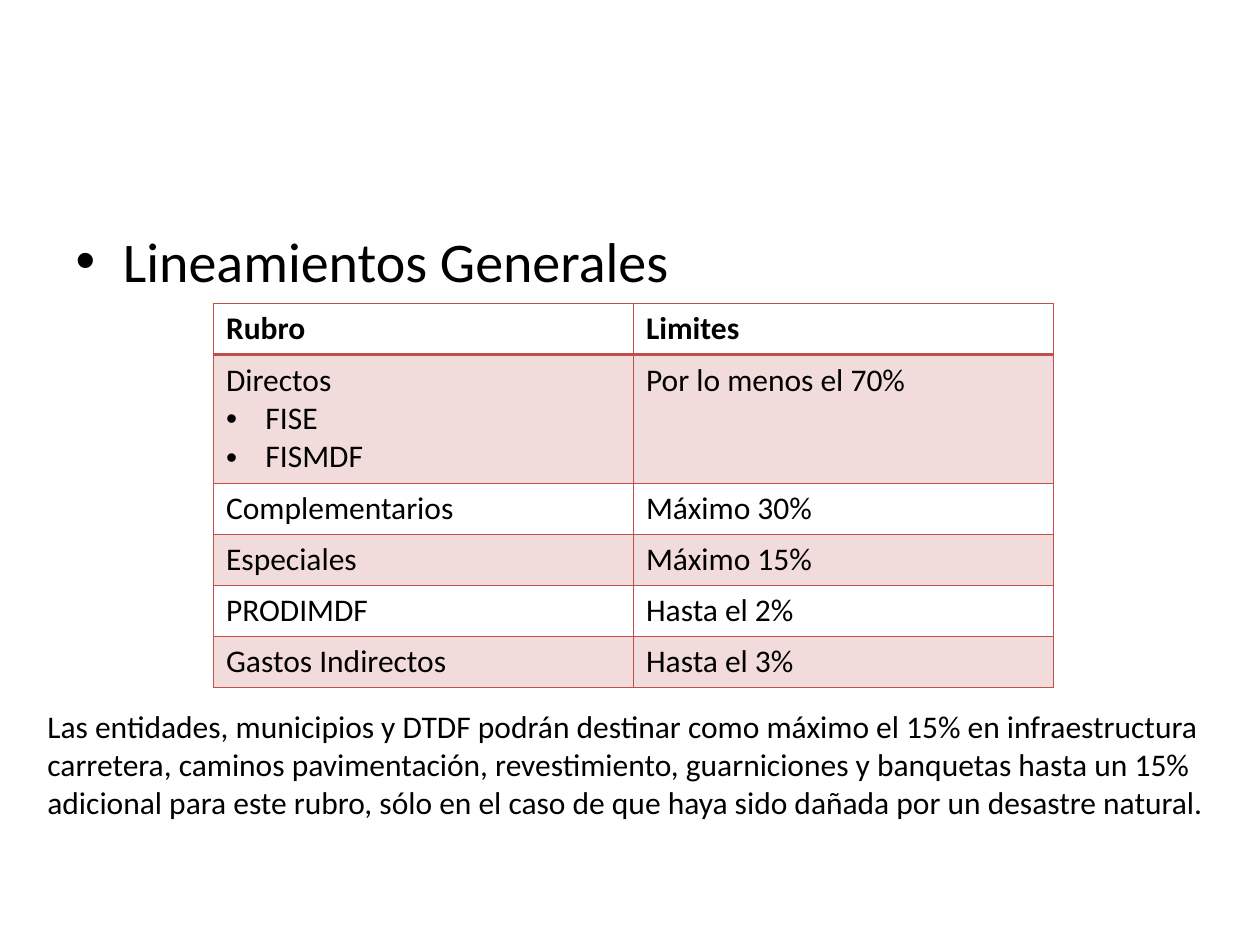
"""Build a slide listing the spending limits of the general guidelines."""
from dataclasses import dataclass

from lxml import etree
from pptx import Presentation
from pptx import util as u
from pptx.dml.color import RGBColor
from pptx.enum import text
from pptx.oxml.ns import qn

BLACK = RGBColor(0x00, 0x00, 0x00)
RED = RGBColor(0xC0, 0x50, 0x4D)
PALE_RED = RGBColor(0xF2, 0xDC, 0xDB)
ROW_HEIGHT = 29.2
TABLE_WIDTH = 480


@dataclass(frozen=True)
class Limit:
    item: str
    limit: str
    funds: tuple[str, ...] = ()
    height: float = ROW_HEIGHT


ROWS = (
    Limit("Rubro", "Limites"),
    Limit("Directos", "Por lo menos el 70%", ("FISE", "FISMDF"), 73.5),
    Limit("Complementarios", "Máximo 30%"),
    Limit("Especiales", "Máximo 15%"),
    Limit("PRODIMDF", "Hasta el 2%"),
    Limit("Gastos Indirectos", "Hasta el 3%"),
)
NOTE = (
    "Las entidades, municipios y DTDF podrán destinar como máximo el 15% en "
    "infraestructura carretera, caminos pavimentación, revestimiento, "
    "guarniciones y banquetas hasta un 15% adicional para este rubro, sólo en "
    "el caso de que haya sido dañada por un desastre natural."
)


def place(shape, left: float, top: float, width: float, height: float) -> None:
    box = {"left": left, "top": top, "width": width, "height": height}
    for name, value in box.items():
        setattr(shape, name, u.Pt(value))


def write(paragraph, words: str, size: float = 18, bold: bool = False,
          bullet_indent: float = 0) -> None:
    paragraph.text = words
    if bullet_indent:
        properties = paragraph._p.get_or_add_pPr()
        properties.set("marL", str(u.Pt(bullet_indent)))
        properties.set("indent", str(-u.Pt(bullet_indent)))
        etree.SubElement(properties, qn("a:buFont"), typeface="Arial")
        etree.SubElement(properties, qn("a:buChar"), char="•")
    paragraph.space_before = u.Pt(0)
    font = paragraph.runs[0].font
    formats = {"name": "Calibri", "size": u.Pt(size), "bold": bold}
    for name, value in formats.items():
        setattr(font, name, value)
    font.color.rgb = BLACK


def add_borders(cell, widths: dict[str, float]) -> None:
    properties = cell._tc.get_or_add_tcPr()
    for side, width in widths.items():
        line = etree.SubElement(properties, qn(f"a:ln{side}"), w=str(u.Pt(width)))
        fill = etree.SubElement(line, qn("a:solidFill"))
        etree.SubElement(fill, qn("a:srgbClr"), val=str(RED))


def add_limits_table(slide, rows: tuple[Limit, ...]) -> None:
    height = sum(row.height for row in rows)
    table = slide.shapes.add_table(
        len(rows), 2, u.Pt(122), u.Pt(173.5), u.Pt(TABLE_WIDTH), u.Pt(height)
    ).table
    for index, row in enumerate(rows):
        table.rows[index].height = u.Pt(row.height)
        header = index == 0
        for column, words in enumerate((row.item, row.limit)):
            cell = table.cell(index, column)
            add_borders(cell, {"L": 1, "R": 1, "T": 2 if index == 1 else 1,
                               "B": 2 if header else 1})
            if index % 2:
                cell.fill.solid()
                cell.fill.fore_color.rgb = PALE_RED
            else:
                cell.fill.background()
            write(cell.text_frame.paragraphs[0], words, bold=header)
        for fund in row.funds:
            paragraph = table.cell(index, 0).text_frame.add_paragraph()
            write(paragraph, fund, bullet_indent=22.5)


def main() -> None:
    presentation = Presentation()
    presentation.slide_width, presentation.slide_height = u.Pt(720), u.Pt(540)
    slide = presentation.slides.add_slide(presentation.slide_layouts[1])
    title, body = slide.placeholders
    title._element.getparent().remove(title._element)

    place(body, 36, 126, 648, 356.4)
    write(body.text_frame.paragraphs[0], "Lineamientos Generales",
          size=32, bullet_indent=27)

    add_limits_table(slide, ROWS)

    note = slide.shapes.add_textbox(0, 0, 0, 0)
    formats = {"word_wrap": True, "auto_size": text.MSO_AUTO_SIZE.SHAPE_TO_FIT_TEXT}
    for name, value in formats.items():
        setattr(note.text_frame, name, value)
    place(note, 20, 400.5, 700, 72.7)
    write(note.text_frame.paragraphs[0], NOTE)

    presentation.save("out.pptx")


if __name__ == "__main__":
    main()
